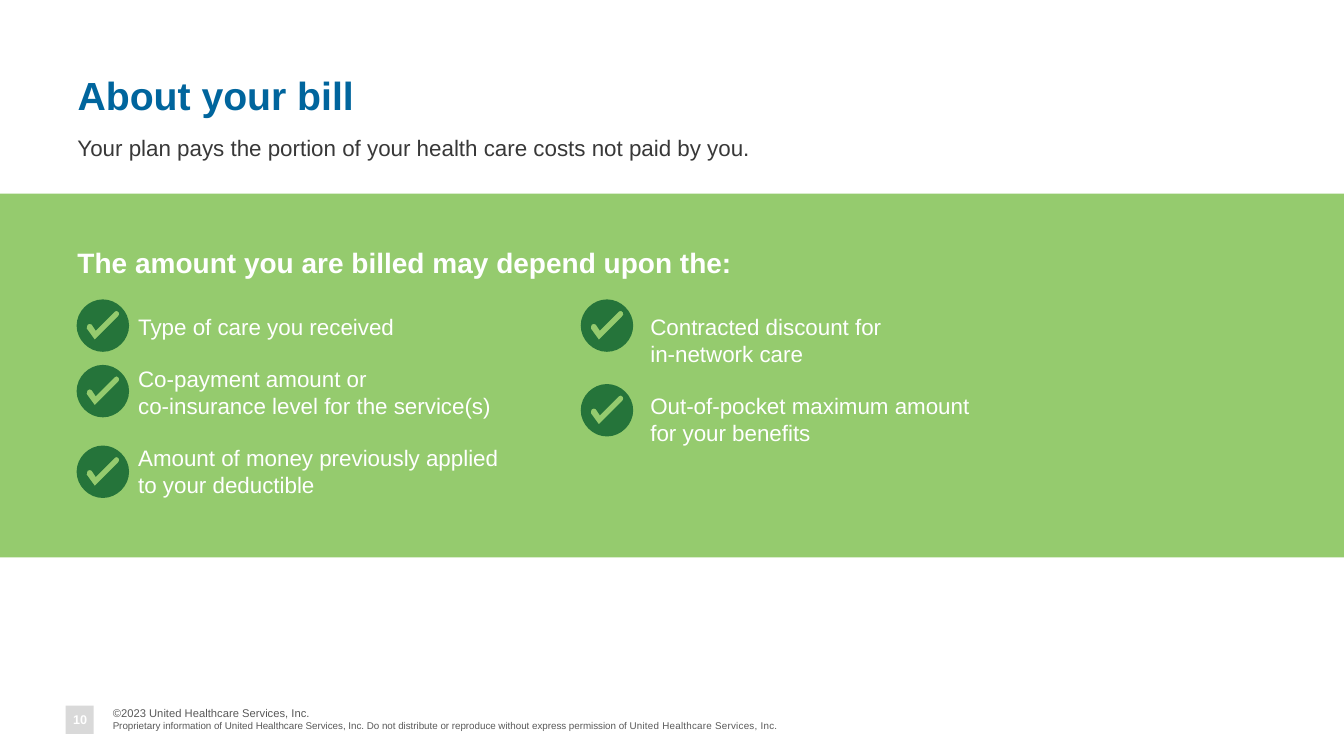
from pptx import Presentation
from pptx.dml.color import RGBColor
from pptx.enum import shapes, text
from pptx.oxml import ns
from pptx.util import Inches, Pt
from lxml import etree

WHITE = RGBColor(0xFF, 0xFF, 0xFF)
BLUE = RGBColor(0x00, 0x65, 0x9D)
CHARCOAL = RGBColor(0x38, 0x38, 0x38)
FOOTER_GRAY = RGBColor(0x59, 0x59, 0x59)
NUMBER_GRAY = RGBColor(0xD9, 0xD9, 0xD9)
LIGHT_GREEN = RGBColor(0x95, 0xCB, 0x6E)
DARK_GREEN = RGBColor(0x25, 0x74, 0x3A)

FONT = "Arial"
RIM = [
    [(0.26, 0)],
    [(0.12, 0), (0, 0.12), (0, 0.26)],
    [(0, 0.40), (0.12, 0.52), (0.26, 0.52)],
    [(0.40, 0.52), (0.52, 0.40), (0.52, 0.26)],
    [(0.52, 0.12), (0.40, 0), (0.26, 0)],
]
CHECK = [
    [(0.41, 0.17)],
    [(0.18, 0.40)],
    [(0.10, 0.29)],
    [(0.10, 0.28), (0.10, 0.26), (0.11, 0.25)],
    [(0.12, 0.24), (0.14, 0.24), (0.15, 0.25)],
    [(0.19, 0.31)],
    [(0.38, 0.12)],
    [(0.39, 0.11), (0.41, 0.11), (0.42, 0.13)],
    [(0.43, 0.14), (0.42, 0.16), (0.41, 0.17)],
]
BILL_FACTORS = [
    ["Type of care you received"],
    ["Co-payment amount or ", "co-insurance level for the service(s)"],
    ["Amount of money previously applied ", "to your deductible"],
    ["Contracted discount for ", "in-network care"],
    ["Out-of-pocket maximum amount ", "for your benefits"],
]
ICON_COLUMNS = {0.76: [1.05, 1.70, 2.50], 5.76: [1.05, 1.89]}


def place(shape, box):
    """Move and size a shape to a box given in inches."""
    shape.left, shape.top, shape.width, shape.height = map(Inches, box)


def add_run(paragraph, words, size, color, bold=False):
    """Append one formatted run to a paragraph."""
    run = paragraph.add_run()
    run.text = words
    run.font.name = FONT
    run.font.size = Pt(size)
    run.font.bold = bold
    run.font.color.rgb = color
    return run


def add_text_box(slide, box):
    """Add a wrapping text box and return its first paragraph."""
    frame = slide.shapes.add_textbox(*map(Inches, box)).text_frame
    frame.word_wrap = True
    return frame.paragraphs[0]


def paint(shape, color):
    """Give a shape a flat fill without line or shadow."""
    shape.shadow.inherit = False
    shape.fill.solid()
    shape.fill.fore_color.rgb = color
    shape.line.fill.background()


def add_rectangle(slide, box, color):
    """Add a plain rectangle."""
    rectangle = slide.shapes.add_shape(
        shapes.MSO_SHAPE.RECTANGLE, *map(Inches, box))
    paint(rectangle, color)
    return rectangle


def add_header(slide, box):
    """Place the title and the introductory sentence."""
    left, top, width, height = box
    title = slide.shapes.title
    place(title, (left, top, width, 1.25))
    frame = title.text_frame
    frame.auto_size = text.MSO_AUTO_SIZE.NONE
    frame.vertical_anchor = text.MSO_ANCHOR.MIDDLE
    paragraph = frame.paragraphs[0]
    paragraph.alignment = text.PP_ALIGN.LEFT
    paragraph.line_spacing = Pt(28)
    add_run(paragraph, "About your bill", 28, BLUE, bold=True)

    sentence = add_text_box(slide, (left, top + 0.92, width + 0.15, height - 0.92))
    add_run(sentence, "Your plan pays the portion of your health care costs "
            "not paid by you.", 16, CHARCOAL)


def bend(line, controls):
    """Turn a straight path segment into a Bézier curve."""
    line.tag = ns.qn("a:cubicBezTo")
    for index, (x, y) in enumerate(controls):
        point = etree.Element(ns.qn("a:pt"), x=str(Inches(x)), y=str(Inches(y)))
        line.insert(index, point)


def add_check_icon(slide, left, top):
    """Add a round icon with a check mark cut out of it."""
    rim, check = [[(Inches(left + x), Inches(top + y)) for *_, (x, y) in outline]
                  for outline in (RIM, CHECK)]
    builder = slide.shapes.build_freeform(*rim[0])
    builder.add_line_segments(rim[1:])
    builder.move_to(*check[0])
    builder.add_line_segments(check[1:])
    icon = builder.convert_to_shape()
    lines = list(icon.element.iter(ns.qn("a:lnTo")))
    for line, segment in zip(lines, RIM[1:] + CHECK[1:]):
        if len(segment) == 3:
            bend(line, segment[:2])
    paint(icon, DARK_GREEN)


def add_factor_list(placeholder, box):
    """Fill the body placeholder with the factors in two columns."""
    place(placeholder, box)
    frame = placeholder.text_frame
    frame.auto_size = text.MSO_AUTO_SIZE.NONE
    body = placeholder.element.txBody.find(ns.qn("a:bodyPr"))
    body.set("numCol", "2")
    body.set("spcCol", str(Inches(0.8)))
    for index, lines in enumerate(BILL_FACTORS):
        paragraph = frame.add_paragraph() if index else frame.paragraphs[0]
        properties = paragraph._p.get_or_add_pPr()
        properties.set("marL", "0")
        properties.set("indent", "0")
        etree.SubElement(properties, ns.qn("a:buNone"))
        paragraph.space_before = Pt(0)
        paragraph.space_after = Pt(18)
        paragraph.font.size = Pt(16)
        for number, line in enumerate(lines):
            if number:
                paragraph.add_line_break()
            add_run(paragraph, line, 16, WHITE)


def add_band(slide, box):
    """Place the green band with its heading, list and check icons."""
    left, top, width, height = box
    band = add_rectangle(slide, box, LIGHT_GREEN)
    slide.shapes.element.insert(2, band.element)
    heading = add_text_box(slide, (left + 0.67, top + 0.47, 7.13, 0.61))
    add_run(heading, "The amount you are billed may depend upon the:", 20, WHITE,
            bold=True)
    add_factor_list(slide.placeholders[1],
                    (left + 1.27, top + 1.14, 9.56, height - 1.35))
    for icon_left, icon_tops in ICON_COLUMNS.items():
        for icon_top in icon_tops:
            add_check_icon(slide, left + icon_left, top + icon_top)


def add_footer(slide, box):
    """Place the page number and the copyright lines."""
    left, top, width, height = box
    add_rectangle(slide, (left + 0.14, top + 0.04, 0.28, 0.28), NUMBER_GRAY)
    number = add_text_box(slide, (left, top + 0.05, 0.57, 0.25))
    number.alignment = text.PP_ALIGN.CENTER
    add_run(number, "10", 9, WHITE, bold=True)

    notice = add_text_box(slide, (left + 0.51, top, width - 0.51, height))
    add_run(notice, "©2023 United Healthcare Services, Inc.", 8, FOOTER_GRAY)
    notice.add_line_break()
    add_run(notice, "Proprietary information of United Healthcare Services, Inc. "
            "Do not distribute or reproduce without express permission of ",
            7, FOOTER_GRAY)
    owner = add_run(notice, "United Healthcare Services, Inc.", 7, FOOTER_GRAY)
    owner.font._element.set("spc", "20")


def main():
    """Build and save the slide."""
    presentation = Presentation()
    presentation.slide_width = Inches(13.33)
    presentation.slide_height = Inches(7.5)
    slide = presentation.slides.add_slide(presentation.slide_layouts[1])
    add_header(slide, (0.67, 0.36, 7, 1.5))
    add_band(slide, (0, 1.92, 13.33, 3.61))
    add_footer(slide, (0.51, 6.96, 8.56, 0.35))
    presentation.save("out.pptx")


if __name__ == "__main__":
    main()
